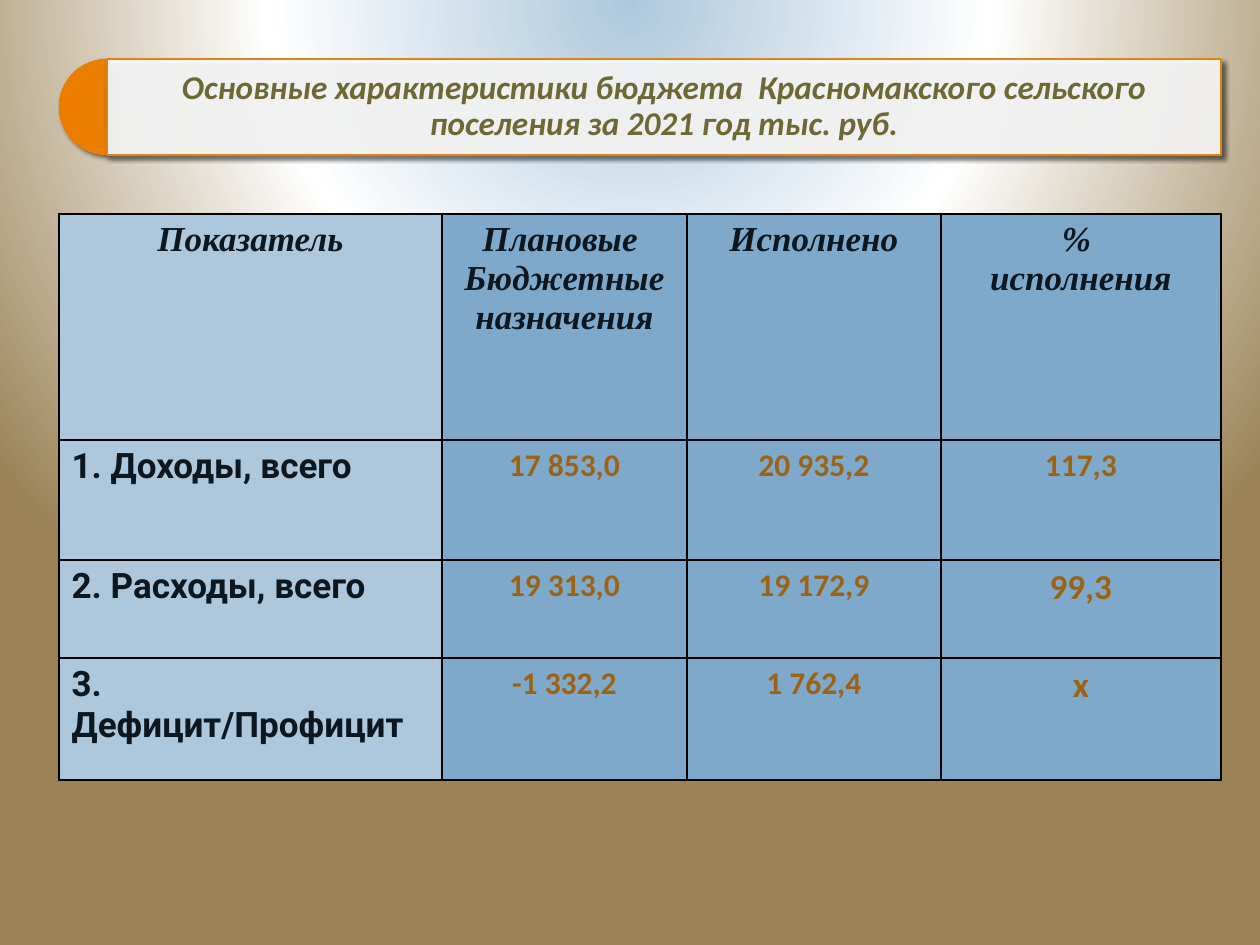
from dataclasses import dataclass

from lxml import etree
from pptx import Presentation
from pptx import util as u
from pptx.dml.color import RGBColor
from pptx.enum import shapes, text
from pptx.oxml import parse_xml
from pptx.oxml.ns import nsdecls, qn

SCALE = u.Inches(1) / 126


@dataclass(frozen=True)
class Theme:
    sky: str = "ADC8DD"
    steel: str = "7EA9CA"
    orange: str = "E48312"
    olive: str = "6D6834"
    navy: str = "0D171F"
    amber: str = "9D6314"
    black: str = "000000"
    white: str = "FFFFFF"
    backdrop: tuple = ((0, "ADC8DD"), (46, "FFFFFF"), (100, "9B8357"))
    glow: tuple = ((0, "E57B00"), (34, "E87D00"), (70, "EB7E00"), (100, "EF8407"))
    title_size: int = 19
    label_size: int = 20
    value_size: int = 18
    body: str = "Calibri"
    heading: str = "Times New Roman"
    label: str = "Roboto"


THEME = Theme()
COLUMNS = (383, 245, 254, 280)
ROWS = (226, 120, 98, 122)
HEADINGS = (("Показатель",), ("Плановые ", "Бюджетные назначения"),
            ("Исполнено",), ("% ", "исполнения"))
BUDGET = (
    ("1. Доходы, всего", "17 853,0", "20 935,2", "117,3"),
    ("2. Расходы, всего", "19 313,0", "19 172,9", "99,3"),
    ("3. Дефицит/Профицит", "-1 332,2", "1 762,4", "х"),
)
LARGE_VALUES = ("99,3", "х")


def px(length):
    return u.Emu(round(length * SCALE))


def rgb(value):
    return RGBColor.from_string(value)


def set_gradient(fill, owner, stops, focus):
    fill.background()
    stop_xml = "".join(f'<a:gs pos="{pos * 1000}"><a:srgbClr val="{color}"/></a:gs>'
                       for pos, color in stops)
    edges = " ".join(f'{side}="{value * 1000}"' for side, value in zip("ltrb", focus))
    gradient = parse_xml(
        f'<a:gradFill {nsdecls("a")} rotWithShape="1"><a:gsLst>{stop_xml}</a:gsLst>'
        f'<a:path path="circle"><a:fillToRect {edges}/></a:path></a:gradFill>')
    empty = next(owner.iter(qn("a:noFill")))
    empty.getparent().replace(empty, gradient)


def add_shadow(shape):
    shape.shadow.inherit = False
    effects = shape._element.spPr.find(qn("a:effectLst"))
    effects.append(parse_xml(
        f'<a:outerShdw {nsdecls("a")} blurRad="{u.Pt(3)}" dist="{u.Pt(2)}" dir="2700000" '
        f'algn="tl" rotWithShape="0"><a:srgbClr val="{THEME.black}">'
        f'<a:alpha val="60000"/></a:srgbClr></a:outerShdw>'))


def write(paragraph, words, font, size, color, italic=False, align=text.PP_ALIGN.CENTER):
    paragraph.alignment = align
    run = paragraph.add_run()
    run.text = words
    run.font.name = font
    run.font.size = u.Pt(size)
    run.font.bold = True
    run.font.italic = italic
    run.font.color.rgb = rgb(color)


def add_half_disc(slide, left, top, size):
    disc = slide.shapes.add_shape(shapes.MSO_SHAPE.PIE, px(left), px(top), px(size), px(size))
    disc.adjustments[0] = 54
    disc.adjustments[1] = 162
    set_gradient(disc.fill, disc._element.spPr, THEME.glow, (100, 100, 100, 100))
    disc.line.fill.background()
    add_shadow(disc)


def add_banner(slide, box):
    banner = slide.shapes.add_shape(shapes.MSO_SHAPE.RECTANGLE, *map(px, box))
    banner.fill.solid()
    banner.fill.fore_color.rgb = rgb(THEME.white)
    white = banner._element.spPr.find(qn("a:solidFill"))[0]
    etree.SubElement(white, qn("a:alpha")).set("val", "90000")
    banner.line.color.rgb = rgb(THEME.orange)
    banner.line.width = u.Pt(1)
    add_shadow(banner)


def add_title(slide, box, words):
    frame = slide.shapes.add_textbox(*map(px, box)).text_frame
    frame.word_wrap = True
    frame.vertical_anchor = text.MSO_ANCHOR.MIDDLE
    frame.margin_left = frame.margin_right = px(10)
    frame.margin_top = frame.margin_bottom = px(10)
    title = frame.paragraphs[0]
    title.line_spacing = 0.9
    write(title, words, THEME.body, THEME.title_size, THEME.olive, italic=True)


def style_cell(cell, color):
    properties = cell._tc.get_or_add_tcPr()
    for side in ("lnL", "lnR", "lnT", "lnB"):
        properties.append(parse_xml(
            f'<a:{side} {nsdecls("a")} w="{u.Pt(0.96)}"><a:solidFill>'
            f'<a:srgbClr val="{THEME.black}"/></a:solidFill></a:{side}>'))
    cell.fill.solid()
    cell.fill.fore_color.rgb = rgb(color)


def fill_heading(cell, lines):
    frame = cell.text_frame
    for index, line in enumerate(lines):
        paragraph = frame.add_paragraph() if index else frame.paragraphs[0]
        write(paragraph, line, THEME.heading, THEME.label_size, THEME.navy, italic=True)


def fill_label(cell, words):
    write(cell.text_frame.paragraphs[0], words, THEME.label, THEME.label_size,
          THEME.navy, align=text.PP_ALIGN.LEFT)


def fill_value(cell, words):
    size = THEME.label_size if words in LARGE_VALUES else THEME.value_size
    write(cell.text_frame.paragraphs[0], words, THEME.body, size, THEME.amber)


def add_budget_table(slide, left, top):
    table = slide.shapes.add_table(len(ROWS), len(COLUMNS), px(left), px(top),
                                   px(sum(COLUMNS)), px(sum(ROWS))).table
    table.first_row = table.horz_banding = False
    for column, width in zip(table.columns, COLUMNS):
        column.width = px(width)
    for row, height in zip(table.rows, ROWS):
        row.height = px(height)
    for r, entries in enumerate((HEADINGS, *BUDGET)):
        for c, entry in enumerate(entries):
            cell = table.cell(r, c)
            style_cell(cell, THEME.steel if c else THEME.sky)
            fill_entry = fill_heading if r == 0 else fill_value if c else fill_label
            fill_entry(cell, entry)


def main():
    deck = Presentation()
    deck.slide_width, deck.slide_height = px(1260), px(945)
    slide = deck.slides.add_slide(deck.slide_layouts[6])
    set_gradient(slide.background.fill, slide._element, THEME.backdrop, (50, -80, 50, 180))
    banner_box = (107, 59, 1114, 96)
    add_half_disc(slide, 59, 59, 96)
    add_banner(slide, banner_box)
    add_title(slide, banner_box, "Основные характеристики бюджета  Красномакского "
                                 "сельского поселения за 2021 год тыс. руб.")
    add_budget_table(slide, 59, 214)
    deck.save("out.pptx")


if __name__ == "__main__":
    main()
